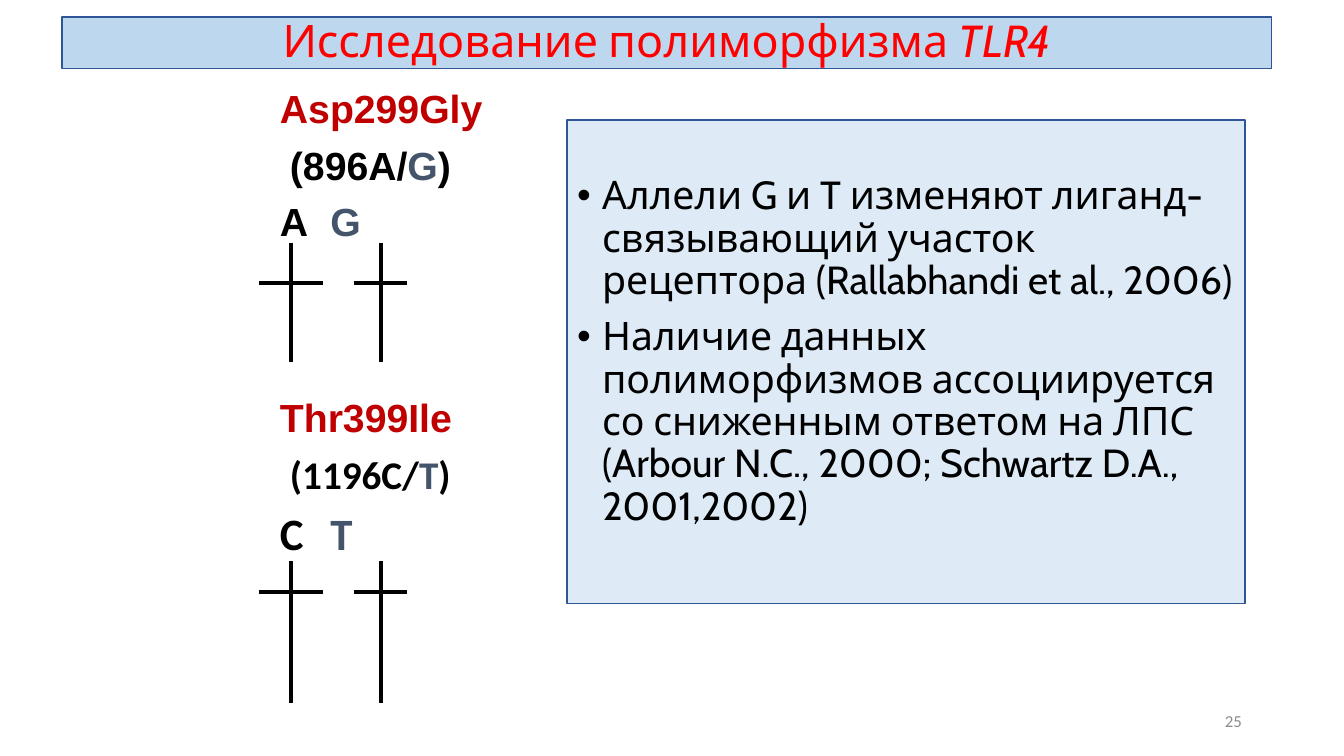
from pptx import Presentation
from pptx.dml.color import RGBColor
from pptx.enum.shapes import MSO_CONNECTOR
from pptx.enum.text import MSO_ANCHOR as ANCHOR, MSO_AUTO_SIZE as AUTO, PP_ALIGN as ALIGN
from pptx.oxml.ns import qn
from pptx.util import Pt
from lxml.etree import SubElement

SCALE = 914400 / 100.8
COLORS = dict(title_fill="BDD7EE", panel_fill="DEEBF7", border="2F5597", title="FF0000",
              text="000000", gene="C00000", variant="44546A", number="8C8C8C")


def px(n):
    return round(n * SCALE)


def rgb(name):
    return RGBColor.from_string(COLORS[name])


class SlideBuilder:
    def __init__(self, prs):
        self.s = prs.slides.add_slide(prs.slide_layouts[4])
        self.ph = {p.placeholder_format.idx: p for p in self.s.placeholders}

    def frame(self, sp, box, anchor=ANCHOR.TOP, top=5):
        """Place a shape and reset its text frame."""
        for name, value in zip(("left", "top", "width", "height"), box):
            setattr(sp, name, px(value))
        tf = sp.text_frame
        style = dict(word_wrap=True, auto_size=AUTO.NONE, vertical_anchor=anchor,
                     margin_left=px(10), margin_right=px(10),
                     margin_top=px(top), margin_bottom=px(5))
        for name, value in style.items():
            setattr(tf, name, value)
        return tf

    def fill(self, sp, color):
        sp.fill.solid()
        sp.fill.fore_color.rgb = rgb(color)
        sp.line.color.rgb = rgb("border")
        sp.line.width = Pt(0.75)

    def paragraph(self, tf, runs, first=False, align=ALIGN.LEFT, before=10, spacing=0.9,
                  indent=0, hanging=0, tab=None):
        """Add a paragraph of (text, format) runs; a hanging indent brings a bullet."""
        p = tf.paragraphs[0] if first else tf.add_paragraph()
        for name, value in dict(alignment=align, line_spacing=spacing,
                                space_before=Pt(before)).items():
            setattr(p, name, value)
        pPr = p._p.get_or_add_pPr()
        pPr.set("marL", str(px(indent)))
        pPr.set("indent", str(-px(hanging)))
        if hanging:
            SubElement(pPr, qn("a:buFont"), typeface="Arial")
            SubElement(pPr, qn("a:buChar"), char="•")
        else:
            SubElement(pPr, qn("a:buNone"))
        if tab:
            tabs = SubElement(pPr, qn("a:tabLst"))
            SubElement(tabs, qn("a:tab"), pos=str(px(tab)), algn="l")
        for text, style in runs:
            r = p.add_run()
            r.text = text
            style = dict(style)
            r.font.color.rgb = rgb(style.pop("color", "text"))
            r.font.size = Pt(style.pop("size", 28))
            for name, value in style.items():
                setattr(r.font, name, value)

    def title(self, runs, box):
        sp = self.s.shapes.title
        self.fill(sp, "title_fill")
        self.paragraph(self.frame(sp, box, ANCHOR.MIDDLE), runs, True, ALIGN.CENTER, 0)

    def bullets(self, idx, items, box):
        sp = self.ph[idx]
        self.fill(sp, "panel_fill")
        tf = self.frame(sp, box, top=56)
        for i, item in enumerate(items):
            self.paragraph(tf, [(item, dict(name="Cabin", bold=False))], i == 0,
                           indent=25, hanging=25)

    def gene(self, idx, box, name, change, alleles, font, allele_size, tab):
        """Write the substitution, the nucleotide change and the two alleles."""
        tf = self.frame(self.ph[idx], box)
        base = dict(name=font, bold=True)
        variant = dict(base, color="variant")
        big = dict(size=allele_size)
        common, rare = alleles
        self.paragraph(tf, [(name, dict(name="Arial", bold=True, color="gene"))], True,
                       indent=202)
        self.paragraph(tf, [(f"({change}{common}/", base), (rare, variant), (")", base)],
                       indent=212)
        self.paragraph(tf, [(f"{common}\t", {**base, **big}), (rare, {**variant, **big})],
                       indent=202, tab=tab)

    def line(self, x1, y1, x2, y2):
        c = self.s.shapes.add_connector(MSO_CONNECTOR.STRAIGHT, *map(px, (x1, y1, x2, y2)))
        c.line.color.rgb = rgb("text")
        c.line.width = Pt(2.25)
        SubElement(c._element.spPr, qn("a:effectLst"))

    def crosses(self, top, bar, bottom):
        """Draw the pair of crossed lines below the alleles."""
        for stem, left, right in ((291, 259, 323), (381, 354, 407)):
            self.line(stem, top, stem, bottom)
            self.line(left, bar, right, bar)

    def number(self, text, box):
        sp = self.s.shapes.add_textbox(0, 0, 0, 0)
        style = dict(name="Calibri", size=12, color="number")
        self.paragraph(self.frame(sp, box, ANCHOR.MIDDLE), [(text, style)], True,
                       ALIGN.RIGHT, 0, 1)

    def drop_empty(self):
        for sp in list(self.s.placeholders):
            if not sp.text_frame.text:
                sp._element.getparent().remove(sp._element)


def main():
    prs = Presentation()
    prs.slide_width, prs.slide_height = px(1344), px(756)
    b = SlideBuilder(prs)
    heading = dict(name="Cabin", size=32, color="title")
    b.title([("Исследование полиморфизма ", heading), ("TLR4", dict(heading, italic=True))],
            (62, 17, 1210, 52))
    b.bullets(2, [
        "Аллели G и T изменяют лиганд-связывающий участок рецептора (Rallabhandi et al., 2006)",
        "Наличие данных полиморфизмов ассоциируется со сниженным ответом на ЛПС "
        "(Arbour N.C., 2000; Schwartz D.A., 2001,2002)",
    ], (567, 120, 678, 484))
    b.gene(1, (68, 85, 594, 333), "Asp299Gly", "896", "AG", "Arial", 28, 293)
    b.gene(3, (68, 394, 594, 349), "Thr399Ile", "1196", "CT", "Calibri", 32, 297)
    b.crosses(243, 283, 362)
    b.crosses(561, 592, 703)
    b.number("25", (950, 701, 302, 40))
    b.drop_empty()
    prs.save("out.pptx")


if __name__ == "__main__":
    main()
